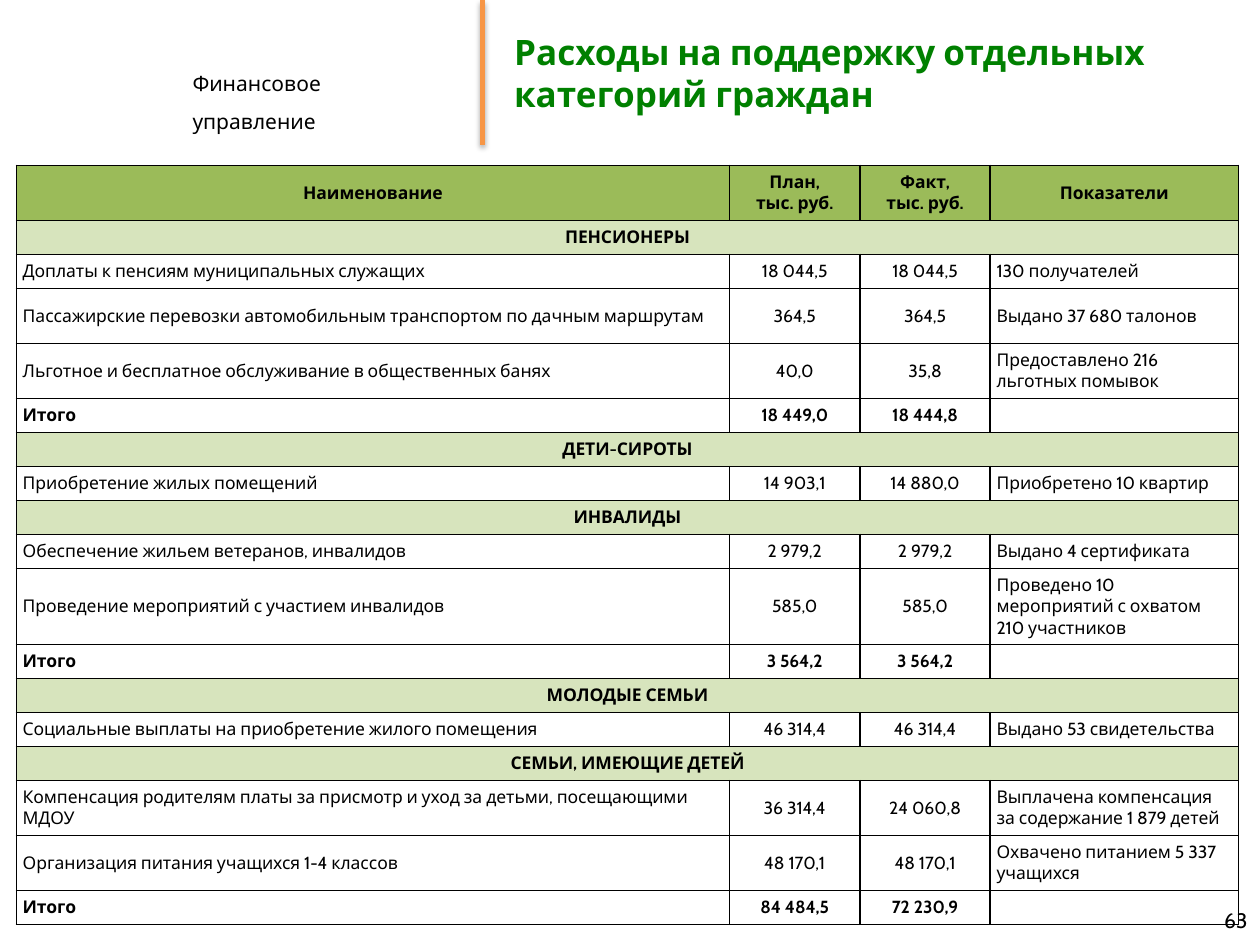
"""Slide with a table of spending on support for categories of citizens."""
from pptx import Presentation
from pptx.dml.color import RGBColor
from pptx.enum.shapes import MSO_CONNECTOR
from pptx.enum.text import MSO_ANCHOR, MSO_AUTO_SIZE, PP_ALIGN
from pptx.oxml import parse_xml
from pptx.oxml.ns import nsdecls
from pptx.util import Inches, Pt

COLORS = {"text": "000000", "title": "008000", "bar": "F79646",
          "head": "9BBB59", "group": "D7E4BD"}
FONT = "Cabin"

prs = Presentation()
prs.slide_width, prs.slide_height = Inches(10), Inches(7.5)
COL, ROW = prs.slide_width / 100, prs.slide_height / 100


def grid(x, y, w, h):
    return int(x * COL), int(y * ROW), int(w * COL), int(h * ROW)


def style(tf, size, color="text", bold=False, align=PP_ALIGN.LEFT):
    for p in tf.paragraphs:
        p.alignment = align
        p.font.name, p.font.size, p.font.bold = FONT, Pt(size), bold
        p.font.color.rgb = RGBColor.from_string(COLORS[color])


s = prs.slides.add_slide(prs.slide_layouts[5])

title = s.shapes.title
title.left, title.top, title.width, title.height = grid(39.8, 0, 60.2, 15.3)
tf = title.text_frame
tf.text = "Расходы на поддержку отдельных категорий граждан"
tf.word_wrap, tf.auto_size = True, MSO_AUTO_SIZE.NONE
tf.vertical_anchor = MSO_ANCHOR.MIDDLE
style(tf, 20, "title", True)

tf = s.shapes.add_textbox(*grid(14.3, 5.5, 21, 4.8)).text_frame
tf.text, tf.word_wrap = "Финансовое управление", True
tf.paragraphs[0].line_spacing = 1.5
style(tf, 12)

bar = s.shapes.add_connector(MSO_CONNECTOR.STRAIGHT, *grid(38.3, 0, 38.3, 15.3))
bar.line.color.rgb = RGBColor.from_string(COLORS["bar"])
bar.line.width = Pt(3)
bar._element.spPr.append(parse_xml(
    f'<a:effectLst {nsdecls("a")}><a:outerShdw blurRad="{Pt(3.1)}" dist="{Pt(1.8)}" '
    f'dir="5400000" rotWithShape="0"><a:srgbClr val="{COLORS["text"]}">'
    '<a:alpha val="35000"/></a:srgbClr></a:outerShdw></a:effectLst>'))

# Each row: kind, lines of height, cell texts
rows = [
    ("head", 2, "Наименование", "План,\nтыс. руб.", "Факт,\nтыс. руб.", "Показатели"),
    ("group", 1, "ПЕНСИОНЕРЫ"),
    ("item", 1, "Доплаты к пенсиям муниципальных служащих",
     "18 044,5", "18 044,5", "130 получателей"),
    ("item", 2, "Пассажирские перевозки автомобильным транспортом по дачным маршрутам",
     "364,5", "364,5", "Выдано 37 680 талонов"),
    ("item", 2, "Льготное и бесплатное обслуживание в общественных банях",
     "40,0", "35,8", "Предоставлено 216 льготных помывок"),
    ("total", 1, "Итого", "18 449,0", "18 444,8", ""),
    ("group", 1, "ДЕТИ-СИРОТЫ"),
    ("item", 1, "Приобретение жилых помещений",
     "14 903,1", "14 880,0", "Приобретено 10 квартир"),
    ("group", 1, "ИНВАЛИДЫ"),
    ("item", 1, "Обеспечение жильем ветеранов, инвалидов",
     "2 979,2", "2 979,2", "Выдано 4 сертификата"),
    ("item", 3, "Проведение мероприятий с участием инвалидов",
     "585,0", "585,0", "Проведено 10 мероприятий с охватом 210 участников"),
    ("total", 1, "Итого", "3 564,2", "3 564,2", ""),
    ("group", 1, "МОЛОДЫЕ СЕМЬИ"),
    ("item", 1, "Социальные выплаты на приобретение жилого помещения",
     "46 314,4", "46 314,4", "Выдано 53 свидетельства"),
    ("group", 1, "СЕМЬИ, ИМЕЮЩИЕ ДЕТЕЙ"),
    ("item", 2, "Компенсация родителям платы за присмотр и уход за детьми, посещающими МДОУ",
     "36 314,4", "24 060,8", "Выплачена компенсация за содержание 1 879 детей"),
    ("item", 2, "Организация питания учащихся 1-4 классов",
     "48 170,1", "48 170,1", "Охвачено питанием 5 337 учащихся"),
    ("total", 1, "Итого", "84 484,5", "72 230,9", ""),
]
widths = [56.6, 10.35, 10.35, 19.7]
heights = [3.6 + 2.23 * (row[1] - 1) for row in rows]

tbl = s.shapes.add_table(len(rows), len(widths),
                         *grid(1.3, 17.5, sum(widths), sum(heights))).table
tbl.first_row = tbl.horz_banding = False
for column, w in zip(tbl.columns, widths):
    column.width = int(w * COL)

for i, (kind, lines, *texts) in enumerate(rows):
    tbl.rows[i].height = int(heights[i] * ROW)
    if kind == "group":
        tbl.cell(i, 0).merge(tbl.cell(i, len(widths) - 1))
    for j, cell in enumerate(tbl.rows[i].cells):
        text = texts[j] if j < len(texts) else ""
        cell.text = text
        cell.vertical_anchor = MSO_ANCHOR.MIDDLE
        cell.margin_left = cell.margin_right = Inches(0.05)
        cell.margin_top = cell.margin_bottom = Inches(0.05)
        centred = kind in ("head", "group") or j in (1, 2)
        style(cell.text_frame, 10, bold=kind != "item",
              align=PP_ALIGN.CENTER if centred else PP_ALIGN.LEFT)
        if not text:
            cell.text_frame.paragraphs[0]._p.append(
                parse_xml(f'<a:endParaRPr {nsdecls("a")} sz="1000"/>'))
        for side in "LRTB":
            cell._tc.get_or_add_tcPr().append(parse_xml(
                f'<a:ln{side} {nsdecls("a")} w="{Pt(1)}"><a:solidFill>'
                f'<a:srgbClr val="{COLORS["text"]}"/></a:solidFill></a:ln{side}>'))
        if kind in COLORS:
            cell.fill.solid()
            cell.fill.fore_color.rgb = RGBColor.from_string(COLORS[kind])
        else:
            cell.fill.background()

tf = s.shapes.add_textbox(*grid(76.7, 94.7, 23.3, 5.3)).text_frame
tf.text, tf.word_wrap = "63", True
tf.vertical_anchor = MSO_ANCHOR.MIDDLE
style(tf, 12, align=PP_ALIGN.RIGHT)

prs.save("out.pptx")
